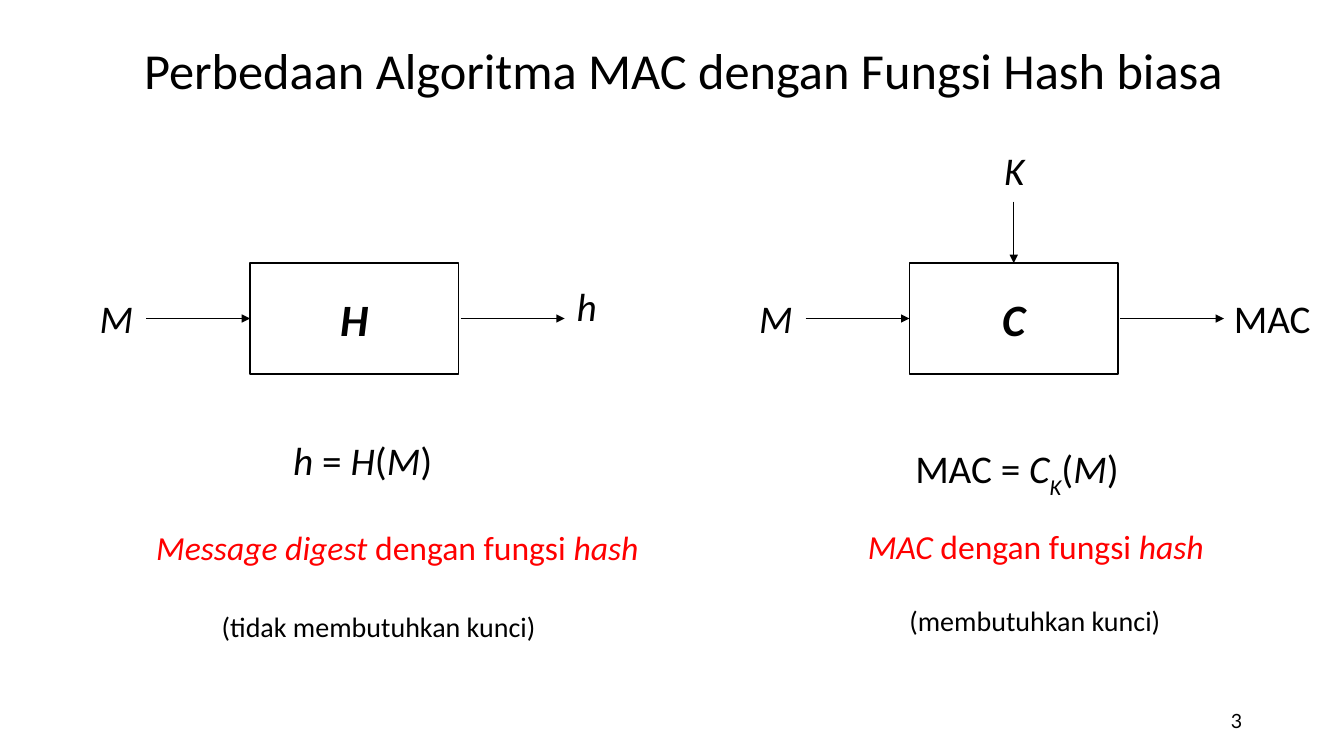
from dataclasses import dataclass

from lxml import etree
from pptx import Presentation
from pptx.dml.color import RGBColor
from pptx.enum.shapes import MSO_CONNECTOR, MSO_SHAPE
from pptx.enum.text import MSO_ANCHOR, PP_ALIGN
from pptx.oxml.ns import qn
from pptx.util import Inches, Pt

STRAIGHT = MSO_CONNECTOR.STRAIGHT
RECT = MSO_SHAPE.RECTANGLE
MIDDLE = MSO_ANCHOR.MIDDLE
LEFT, CENTER, RIGHT = PP_ALIGN.LEFT, PP_ALIGN.CENTER, PP_ALIGN.RIGHT
TOP_SIDE, LEFT_SIDE = 0, 1


@dataclass(frozen=True)
class Theme:
    ink: RGBColor = RGBColor(0, 0, 0)
    red: RGBColor = RGBColor(255, 0, 0)
    font: str = "Calibri"
    foot: str = "Lato"
    title: int = 36
    block: int = 32
    label: int = 28
    name: int = 24
    note: int = 20
    page: int = 14
    line: int = 1


THEME = Theme()
BOX_TOP, BOX_W, BOX_H = 2.61, 2.07, 1.1
AXIS = BOX_TOP + BOX_H / 2
SHIFT = 6.54


def write(frame, text, size, color=THEME.ink, font=THEME.font, align=LEFT, bold=False):
    """Set one line; *stars* mark italics and a leading _ marks a subscript."""
    para = frame.paragraphs[0]
    para.alignment = align
    para.font.name = font
    para.font.size = Pt(size)
    para.font.color.rgb = color
    para.font.bold = bold
    parts = [(part, i % 2 == 1) for i, part in enumerate(text.split("*")) if part]
    mixed = len({slant for _, slant in parts}) > 1
    if not mixed:
        para.font.italic = parts[0][1]
    for part, slant in parts:
        run = para.add_run()
        run.text = part.lstrip("_")
        if mixed:
            run.font.italic = slant
        if part.startswith("_"):
            run._r.get_or_add_rPr().set("baseline", "-30000")


def add_text(slide, text, left, top, width, height, size, anchor=None, **style):
    box = slide.shapes.add_textbox(Inches(left), Inches(top), Inches(width), Inches(height))
    box.text_frame.word_wrap = False
    if anchor is not None:
        box.text_frame.vertical_anchor = anchor
    write(box.text_frame, text, size, **style)


def add_block(slide, text, left):
    box = slide.shapes.add_shape(
        RECT, Inches(left), Inches(BOX_TOP), Inches(BOX_W), Inches(BOX_H))
    box.shadow.inherit = False
    box.fill.background()
    box.line.color.rgb = THEME.ink
    box.line.width = Pt(THEME.line)
    box.text_frame.vertical_anchor = MIDDLE
    write(box.text_frame, text, THEME.block, align=CENTER, bold=True)
    return box


def add_arrow(slide, x1, y1, x2, y2, box=None, side=None):
    arrow = slide.shapes.add_connector(
        STRAIGHT, Inches(x1), Inches(y1), Inches(x2), Inches(y2))
    arrow.line.color.rgb = THEME.ink
    arrow.line.width = Pt(THEME.line)
    etree.SubElement(arrow.line._get_or_add_ln(), qn("a:tailEnd"), type="triangle")
    etree.SubElement(arrow._element.spPr, qn("a:effectLst"))
    if box is not None:
        arrow.end_connect(box, side)


def add_flow(slide, text, shift):
    left = 2.48 + shift
    box = add_block(slide, text, left)
    add_arrow(slide, 1.45 + shift, AXIS, left, AXIS, box, LEFT_SIDE)
    add_arrow(slide, 4.57 + shift, AXIS, 5.6 + shift, AXIS)
    add_text(slide, "*M*", 0.89 + shift, 2.87, 0.54, 0.57, THEME.label)
    return box


def main():
    deck = Presentation()
    deck.slide_width, deck.slide_height = Inches(13.33), Inches(7.5)
    slide = deck.slides.add_slide(deck.slide_layouts[6])

    add_text(slide, "Perbedaan Algoritma MAC dengan Fungsi Hash biasa",
             1.33, 0.34, 11.01, 0.71, THEME.title)

    add_flow(slide, "*H*", 0)
    add_text(slide, "*h*", 5.62, 2.75, 0.41, 0.57, THEME.label)
    add_text(slide, "*h* = *H*(*M*)", 2.81, 4.28, 1.6, 0.57, THEME.label)
    add_text(slide, "*Message digest* dengan fungsi *hash*",
             1.45, 5.18, 5.01, 0.5, THEME.name, color=THEME.red)
    add_text(slide, "(tidak membutuhkan kunci)", 2.1, 6, 3.35, 0.44, THEME.note)

    coder = add_flow(slide, "*C*", SHIFT)
    key = 2.48 + SHIFT + BOX_W / 2
    add_arrow(slide, key, 2, key, BOX_TOP, coder, TOP_SIDE)
    add_text(slide, "*K*", 9.86, 1.4, 0.41, 0.57, THEME.label)
    add_text(slide, "MAC", 12.14, 2.87, 0.97, 0.57, THEME.label)
    add_text(slide, "MAC = *C**_K*(*M*)", 8.98, 4.36, 2.26, 0.57, THEME.label)
    add_text(slide, "*MAC* dengan fungsi *hash*",
             8.51, 5.17, 3.57, 0.5, THEME.name, color=THEME.red)
    add_text(slide, "(membutuhkan kunci)", 8.92, 5.94, 2.78, 0.44, THEME.note)

    add_text(slide, "3", 9.42, 6.95, 3, 0.4, THEME.page,
             anchor=MIDDLE, font=THEME.foot, align=RIGHT)
    deck.save("out.pptx")


if __name__ == "__main__":
    main()
